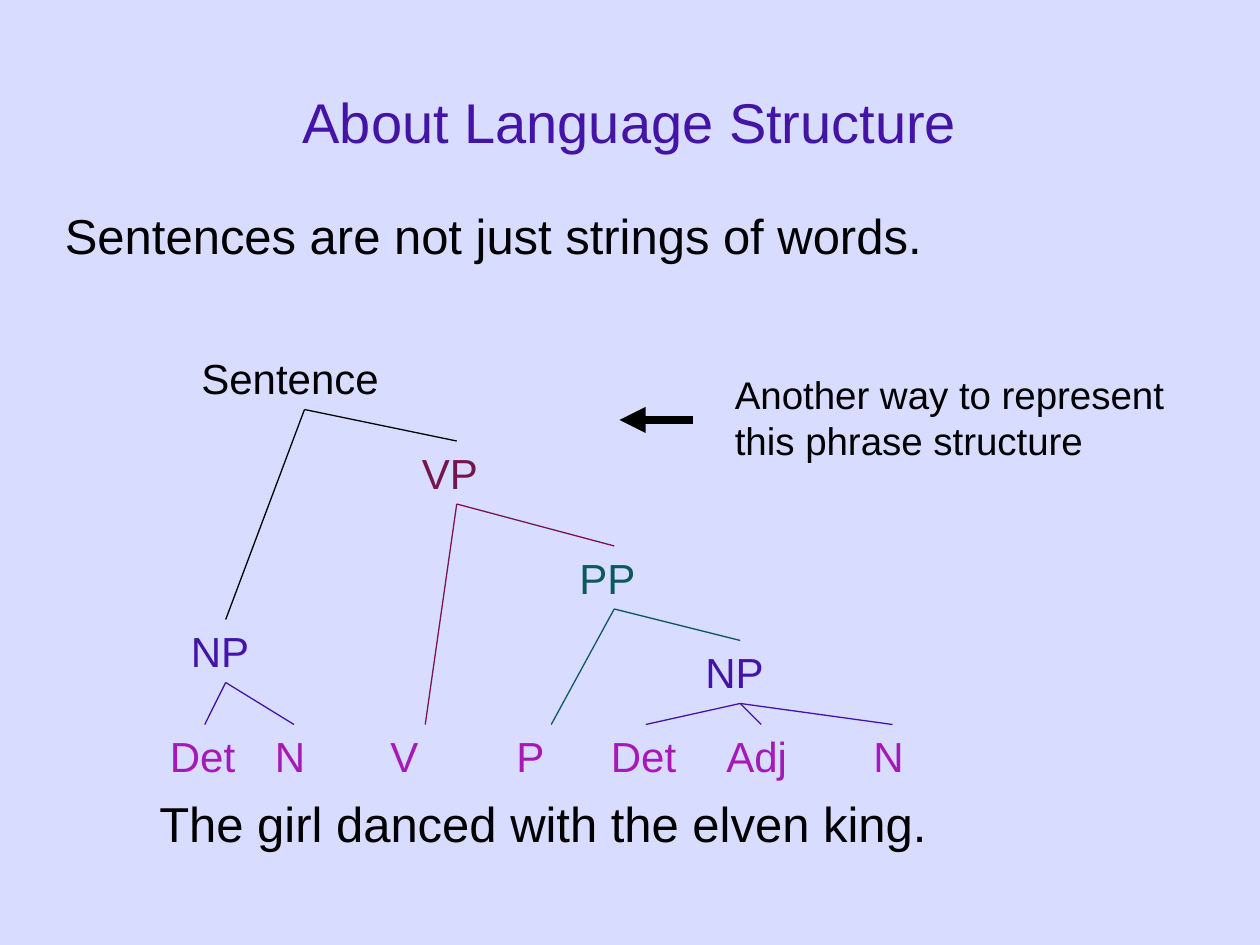
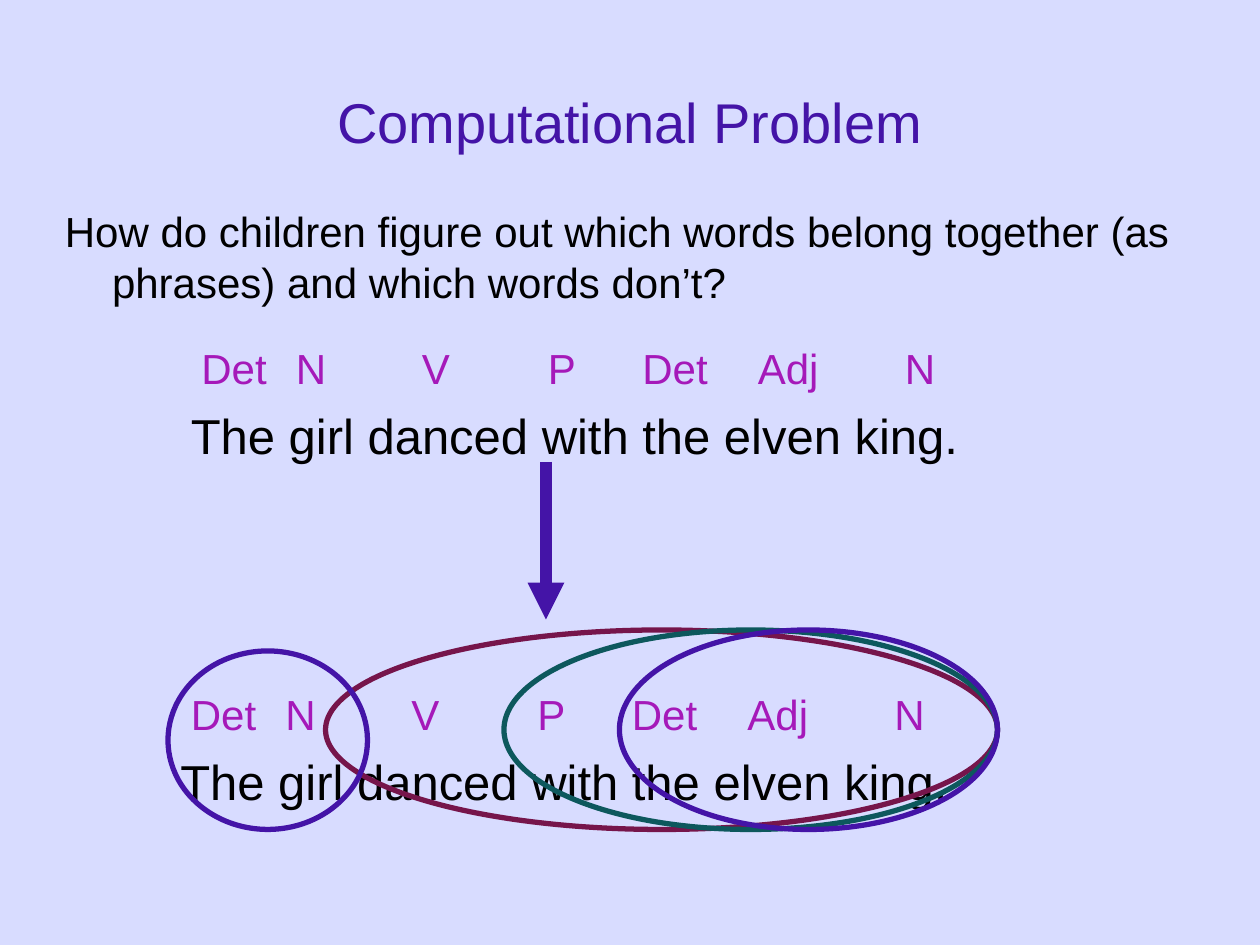
from lxml import etree
from pptx import Presentation
from pptx.dml.color import RGBColor as Rgb
from pptx.enum.shapes import MSO_CONNECTOR as Connector, MSO_SHAPE as Preset
from pptx.enum.text import MSO_ANCHOR as Anchor, PP_ALIGN as Align
from pptx.oxml.ns import qn
from pptx.util import Cm, Pt

# Every place below is counted in grid steps, twelve to the inch.
STEP = 2.54 / 12
FONT = "Arial"
COLORS = {
    "background": "D8DCFF",
    "text": "000000",
    "noun": "4414A7",
    "verb": "76154B",
    "preposition": "0D585D",
    "tag": "A519B9",
}

SENTENCE = "The girl danced with the elven king."
TAGS = ["Det", "N", "V", "P", "Det", "Adj", "N"]
TAG_OFFSETS = [1, 10, 22, 34, 43, 54, 68]
LABEL_WIDTH, LABEL_HEIGHT = 9, 6

STRUCTURE_TITLE = "About Language Structure"
STRUCTURE_BODY = "Sentences are not just strings of words."
STRUCTURE_NOTE = "Another way to represent this phrase structure"
# key: label, left, top, width, color, children (numbers are word positions)
PHRASES = {
    "subject": ("NP", 17, 59, LABEL_WIDTH, "noun", [0, 1]),
    "object": ("NP", 66, 61, LABEL_WIDTH, "noun", [4, 5, 6]),
    "with": ("PP", 54, 52, LABEL_WIDTH, "preposition", [3, "object"]),
    "predicate": ("VP", 39, 42, LABEL_WIDTH, "verb", [2, "with"]),
    "root": ("Sentence", 18, 33, 22, "text", ["subject", "predicate"]),
}

PROBLEM_TITLE = "Computational Problem"
PROBLEM_BODY = ("How do children figure out which words belong together "
                "(as phrases) and which words don’t?")
# left, top, right, color
GROUPS = [
    (31, 60, 95, "verb"),
    (48, 60, 95, "preposition"),
    (16, 62, 35, "noun"),
    (59, 60, 95, "noun"),
]
GROUPS_BOTTOM = 79


def steps(*counts):
    return [Cm(count * STEP) for count in counts]


def rgb(color):
    return Rgb.from_string(COLORS[color])


def add_text(slide, text, place, size, color="text", wrap=True):
    box = slide.shapes.add_textbox(*steps(*place))
    frame = box.text_frame
    frame.word_wrap = wrap
    frame.text = text
    font = frame.paragraphs[0].runs[0].font
    font.name, font.size = FONT, Pt(size)
    font.color.rgb = rgb(color)
    return box


def add_label(slide, text, left, top, color, width=LABEL_WIDTH):
    return add_text(slide, text, (left, top, width, LABEL_HEIGHT), 24, color)


def add_line(slide, color, width, start=(0, 0), end=(0, 0), arrow=False):
    line = slide.shapes.add_connector(Connector.STRAIGHT, *steps(*start, *end))
    line.line.color.rgb = rgb(color)
    line.line.width = Pt(width)
    if arrow:
        etree.SubElement(line.line._get_or_add_ln(), qn("a:tailEnd"), type="triangle")
    etree.SubElement(line._element.spPr, qn("a:effectLst"))
    return line


def add_slide(prs, title, body, body_size):
    slide = prs.slides.add_slide(prs.slide_layouts[6])
    heading = add_text(slide, title, (9, 4, 102, 15), 32, "noun").text_frame
    heading.vertical_anchor = Anchor.MIDDLE
    heading.paragraphs[0].alignment = Align.CENTER
    statement = add_text(slide, body, (5, 19, 111, 66), body_size)
    hanging = Cm(0.95)
    properties = statement.text_frame.paragraphs[0]._p.get_or_add_pPr()
    properties.set("marL", str(hanging))
    properties.set("indent", str(-hanging))
    return slide


def add_tagged_sentence(slide, left, top, first_noun=TAG_OFFSETS[1],
                        noun_width=LABEL_WIDTH):
    """Write the sentence under its word classes and return the class labels."""
    add_text(slide, SENTENCE, (left, top + LABEL_HEIGHT, 75.6, 6.8), 28, wrap=False)
    offsets = [TAG_OFFSETS[0], first_noun, *TAG_OFFSETS[2:]]
    return [
        add_label(slide, tag, left + offset, top, "tag",
                  noun_width if tag == "N" else LABEL_WIDTH)
        for tag, offset in zip(TAGS, offsets)
    ]


def build_structure(prs):
    slide = add_slide(prs, STRUCTURE_TITLE, STRUCTURE_BODY, 28)
    words = add_tagged_sentence(slide, 14, 69, first_noun=11, noun_width=6)
    nodes = dict(enumerate(words))
    for key, (label, left, top, width, color, _) in PHRASES.items():
        nodes[key] = add_label(slide, label, left, top, color, width)
    for key, (*_, color, children) in PHRASES.items():
        for child in children:
            branch = add_line(slide, color, 0.75)
            branch.begin_connect(nodes[child], 0)
            branch.end_connect(nodes[key], 2)
    add_text(slide, STRUCTURE_NOTE, (68.8, 34.7, 46.2, 10), 22)
    add_line(slide, "text", 5, (66, 40), (59, 40), arrow=True)


def build_problem(prs):
    slide = add_slide(prs, PROBLEM_TITLE, PROBLEM_BODY, 24)
    add_tagged_sentence(slide, 17, 32)
    add_tagged_sentence(slide, 16, 65)
    for left, top, right, color in GROUPS:
        place = steps(left, top, right - left, GROUPS_BOTTOM - top)
        group = slide.shapes.add_shape(Preset.OVAL, *place)
        group.shadow.inherit = False
        group.fill.background()
        group.line.color.rgb = rgb(color)
        group.line.width = Pt(3)
    add_line(slide, "noun", 7, (52, 44), (52, 59), arrow=True)


def main():
    prs = Presentation()
    prs.slide_width, prs.slide_height = steps(120, 90)
    backdrop = prs.slide_master.background.fill
    backdrop.solid()
    backdrop.fore_color.rgb = rgb("background")
    build_structure(prs)
    build_problem(prs)
    prs.save("out.pptx")


if __name__ == "__main__":
    main()
